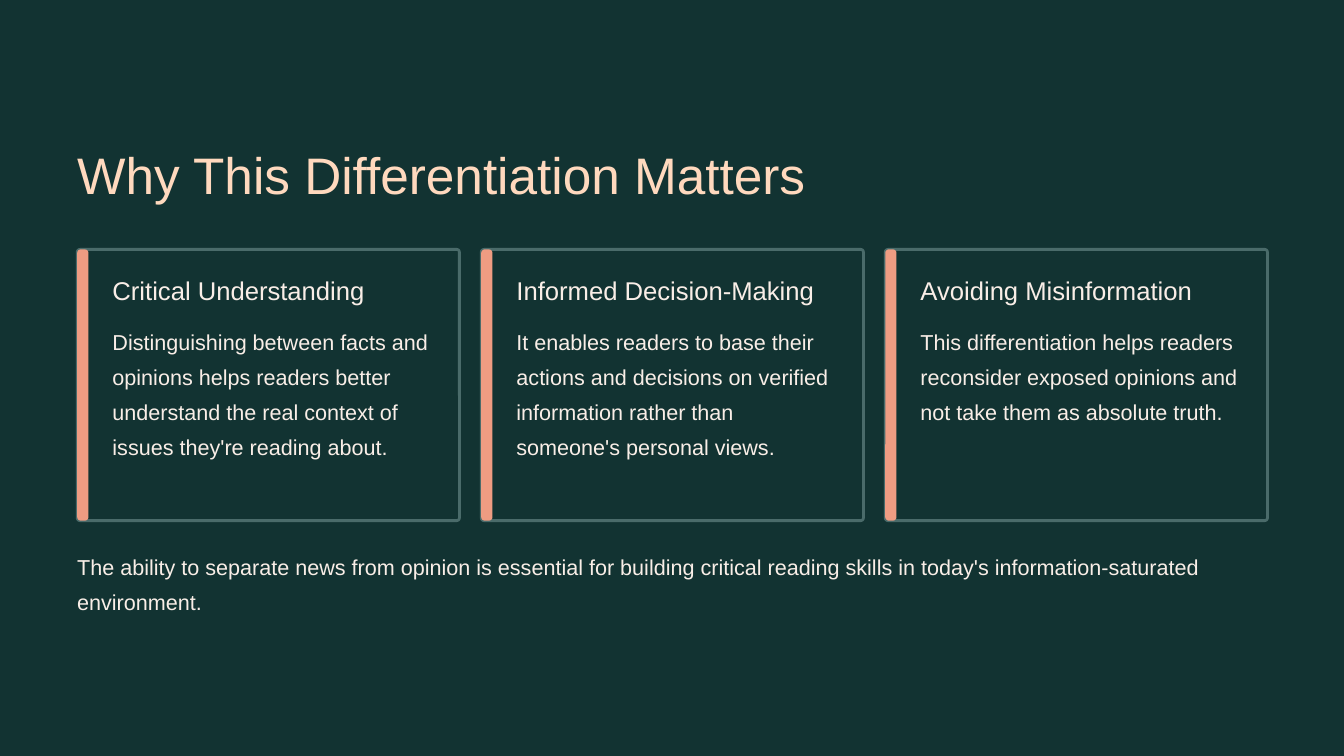
from pptx import Presentation
from pptx.dml.color import RGBColor
from pptx.enum.shapes import MSO_SHAPE
from pptx.enum.text import MSO_ANCHOR, MSO_AUTO_SIZE, PP_ALIGN
from pptx.util import Pt

ROUNDED = MSO_SHAPE.ROUNDED_RECTANGLE
TOP, LEFT, NO_FIT = MSO_ANCHOR.TOP, PP_ALIGN.LEFT, MSO_AUTO_SIZE.NONE

COLORS = {
    "background": "123332",
    "border": "4A6B6A",
    "accent": "EF9C82",
    "title": "FFD9BE",
    "text": "F9EEE7",
}

# Size and line spacing in points, and colour, for each kind of text
STYLES = {
    "title": {"size": 44, "spacing": 55, "color": "title"},
    "heading": {"size": 22, "spacing": 27.5, "color": "text"},
    "body": {"size": 18.5, "spacing": 30, "color": "text"},
}

CARDS = [
    ("Critical Understanding",
     "Distinguishing between facts and opinions helps readers better "
     "understand the real context of issues they're reading about."),
    ("Informed Decision-Making",
     "It enables readers to base their actions and decisions on verified "
     "information rather than someone's personal views."),
    ("Avoiding Misinformation",
     "This differentiation helps readers reconsider exposed opinions and "
     "not take them as absolute truth."),
]
CLOSING = ("The ability to separate news from opinion is essential for building "
           "critical reading skills in today's information-saturated environment.")


def rgb(name):
    return RGBColor.from_string(COLORS[name])


def set_text(sp, text, style, wrap=True):
    fmt = STYLES[style]
    tf = sp.text_frame
    frame = {"word_wrap": wrap, "auto_size": NO_FIT, "vertical_anchor": TOP,
             "margin_left": 0, "margin_right": 0, "margin_top": 0, "margin_bottom": 0}
    for name, value in frame.items():
        setattr(tf, name, value)
    p = tf.paragraphs[0]
    paragraph = {"alignment": LEFT, "line_spacing": Pt(fmt["spacing"]),
                 "space_before": Pt(0)}
    for name, value in paragraph.items():
        setattr(p, name, value)
    r = p.add_run()
    r.text = text
    for name, value in {"name": "Arial", "size": Pt(fmt["size"])}.items():
        setattr(r.font, name, value)
    r.font.color.rgb = rgb(fmt["color"])


def add_text(s, x, y, w, h, text, style, wrap=True):
    sp = s.shapes.add_textbox(Pt(x), Pt(y), Pt(w), Pt(h))
    set_text(sp, text, style, wrap)


def add_panel(s, x, y, w, h, rounding, fill, line=None):
    sp = s.shapes.add_shape(ROUNDED, Pt(x), Pt(y), Pt(w), Pt(h))
    sp.shadow.inherit = False
    sp.adjustments[0] = rounding
    sp.fill.solid()
    sp.fill.fore_color.rgb = rgb(fill)
    if line:
        sp.line.color.rgb = rgb(line)
        sp.line.width = Pt(2.4)
    else:
        sp.line.fill.background()


def add_title(s, x, y, w, h, text):
    sp = s.shapes.title
    box = {"left": x, "top": y, "width": w, "height": h}
    for name, value in box.items():
        setattr(sp, name, Pt(value))
    set_text(sp, text, "title", wrap=False)


def add_card(s, x, y, w, h, heading, body):
    # Outlined panel with an accent bar on its left edge
    add_panel(s, x, y, w, h, 0.01, "background", "border")
    add_panel(s, x, y, 9.6, h, 0.3, "accent")
    # Heading and body share one text column
    inset, text_w = 30.2, w - 52.5
    add_text(s, x + inset, y + 21, text_w, 27.5, heading, "heading", wrap=False)
    add_text(s, x + inset, y + 60, text_w, h - 82, body, "body")


def add_cards(s, x, y, w, h, cards, gap=18.7):
    card_w = (w - gap * (len(cards) - 1)) / len(cards)
    for i, (heading, body) in enumerate(cards):
        add_card(s, x + i * (card_w + gap), y, card_w, h, heading, body)


def main():
    prs = Presentation()
    prs.slide_width, prs.slide_height = Pt(1152), Pt(648)
    s = prs.slides.add_slide(prs.slide_layouts[5])
    s.background.fill.solid()
    s.background.fill.fore_color.rgb = rgb("background")

    # Title, row of cards and closing statement share the same margins
    margin = 66.2
    width = 1152 - 2 * margin + 0.6
    add_title(s, margin, 120.2, 656, 55, "Why This Differentiation Matters")
    add_cards(s, margin, 213.8, width, 232.5, CARDS)
    add_text(s, margin, 467.3, width, 60, CLOSING, "body")
    prs.save("out.pptx")


if __name__ == "__main__":
    main()
